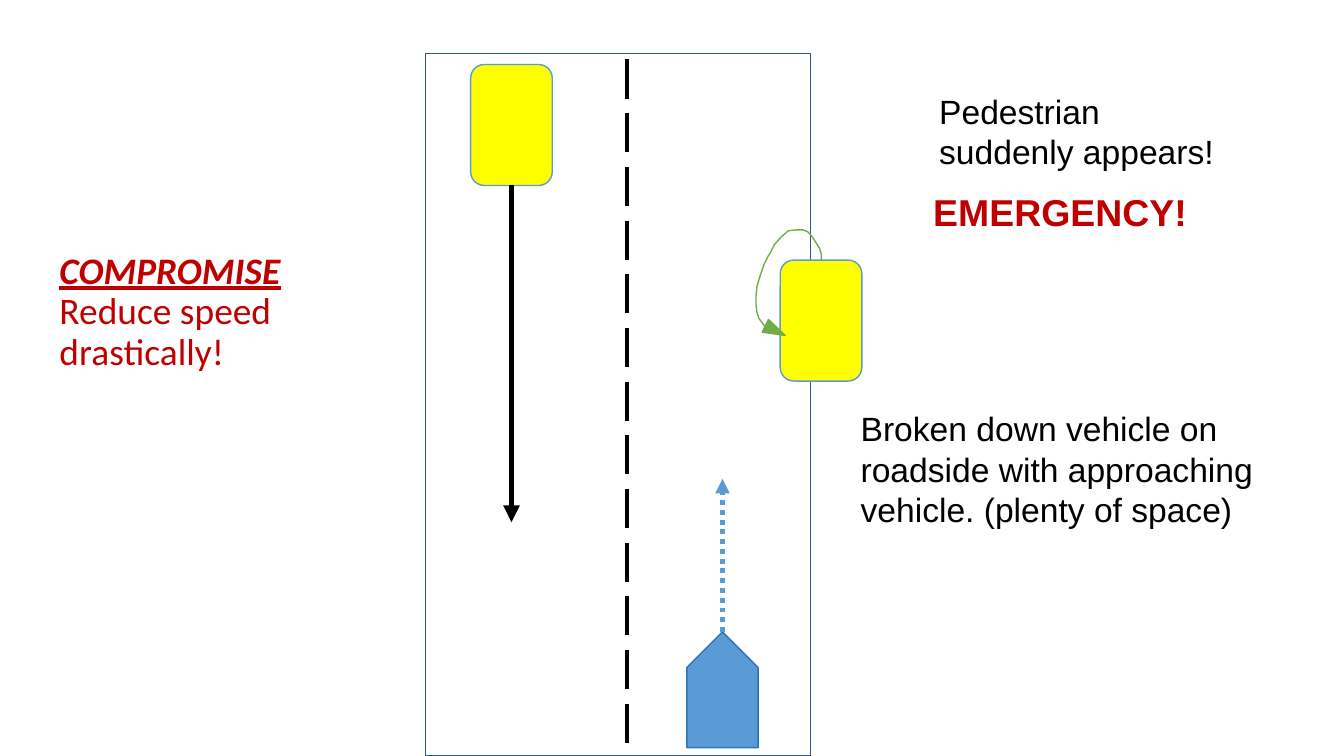
from lxml import etree
from pptx import Presentation
from pptx.dml.color import RGBColor
from pptx.enum.dml import MSO_LINE
from pptx.enum.shapes import MSO_CONNECTOR, MSO_SHAPE
from pptx.enum.text import MSO_ANCHOR
from pptx.oxml.ns import qn
from pptx.util import Pt

STRAIGHT = MSO_CONNECTOR.STRAIGHT
RECTANGLE, ROUNDED = MSO_SHAPE.RECTANGLE, MSO_SHAPE.ROUNDED_RECTANGLE
HOME_PLATE, TRIANGLE = MSO_SHAPE.PENTAGON, MSO_SHAPE.ISOSCELES_TRIANGLE
DOTTED, LONG_DASH = MSO_LINE.ROUND_DOT, MSO_LINE.LONG_DASH
TOP = MSO_ANCHOR.TOP
BOTTOM_SITE = 2

WHITE = RGBColor(0xFF, 0xFF, 0xFF)
BLACK = RGBColor(0x00, 0x00, 0x00)
RED = RGBColor(0xC0, 0x00, 0x00)
YELLOW = RGBColor(0xFF, 0xFF, 0x00)
BLUE = RGBColor(0x5B, 0x9B, 0xD5)
DARK_BLUE = RGBColor(0x2E, 0x75, 0xB6)
NAVY = RGBColor(0x32, 0x54, 0x91)
GREEN = RGBColor(0x70, 0xAD, 0x47)

CAR_WIDTH, CAR_HEIGHT = 58.3, 86.4
# Steps of the pedestrian around the parked car, from its top left corner
WALK = [(29.5, 0), (29.3, -4.5), (28, -8.6), (25.2, -13), (23, -16.6), (20, -20),
        (16.6, -21.6), (11, -21.6), (5.8, -20.9), (0.7, -16.6), (-4.3, -10.8),
        (-7.2, -5), (-8.6, -2.9), (-11.5, 2.9), (-13.7, 9.4), (-15.1, 13.7),
        (-16.6, 18.7), (-17.3, 25.9), (-17.3, 32), (-16.6, 37.4),
        (-15.1, 41.8), (-10.8, 47.5), (-6.5, 49.7), (-2.9, 49.7)]


def apply_format(font, values):
    for name, value in values.items():
        if name == "color":
            font.color.rgb = value
        else:
            setattr(font, name, value)


def add_block(shapes, kind, box, fill, line):
    block = shapes.add_shape(kind, *map(Pt, box))
    block.shadow.inherit = False
    block.fill.solid()
    block.fill.fore_color.rgb = fill
    block.line.color.rgb = line
    block.line.width = Pt(1)
    return block


def add_line(page, start, end, color, width, dash=None, arrow=False):
    line = page.shapes.add_connector(STRAIGHT, *map(Pt, start + end))
    line.line.color.rgb = color
    line.line.width = Pt(width)
    if dash:
        line.line.dash_style = dash
    if arrow:
        etree.SubElement(line.line._get_or_add_ln(), qn("a:tailEnd"), type="triangle")
    etree.SubElement(line._element.spPr, qn("a:effectLst"))
    return line


def add_road(page, left, top, width, height):
    add_block(page.shapes, RECTANGLE, (left, top, width, height), WHITE, NAVY)
    middle = left + 144.1
    add_line(page, (middle, top + 4.3), (middle, top + height - 5.8),
             BLACK, 3.5, LONG_DASH)


def add_car(page, left, top):
    box = (left, top, CAR_WIDTH, CAR_HEIGHT)
    return add_block(page.shapes, ROUNDED, box, YELLOW, BLUE)


def add_oncoming_car(page, left, top):
    car = add_car(page, left, top)
    middle, bottom = left + CAR_WIDTH / 2, top + CAR_HEIGHT
    arrow = add_line(page, (middle, bottom), (middle, bottom + 240.5),
                     BLACK, 4, arrow=True)
    arrow.begin_connect(car, BOTTOM_SITE)


def add_approaching_car(page, left, top, width, height):
    """Draw the blue vehicle pointing up, with its dotted heading."""
    middle = left + width / 2
    box = (middle - height / 2, top + (height - width) / 2, height, width)
    car = add_block(page.shapes, HOME_PLATE, box, BLUE, DARK_BLUE)
    car.rotation = 270
    add_line(page, (middle, top), (middle, top - 109.4), BLUE, 3.5, DOTTED, True)


def add_parked_car(page, left, top):
    """Draw the broken-down car and the pedestrian's way around it."""
    add_car(page, left, top)
    group = page.shapes.add_group_shape()
    steps = [(Pt(left + x), Pt(top + y)) for x, y in WALK]
    builder = group.shapes.build_freeform(*steps[0])
    builder.add_line_segments(steps[1:], close=False)
    walk = builder.convert_to_shape()
    walk.shadow.inherit = False
    walk.fill.background()
    walk.line.color.rgb = GREEN
    walk.line.width = Pt(1)
    head = add_block(group.shapes, TRIANGLE, (left - 8.6, top + 42.5, 10.1, 15.8),
                     GREEN, GREEN)
    head.rotation = 115.9


def add_note(page, box, text, values):
    frame = page.shapes.add_textbox(*map(Pt, box)).text_frame
    frame.word_wrap = True
    span = frame.paragraphs[0].add_run()
    span.text = text
    apply_format(span.font, values)


def fill_advice(body, left, top, width, height):
    body.left, body.top, body.width, body.height = map(Pt, (left, top, width, height))
    frame = body.text_frame
    frame.vertical_anchor = TOP
    para = frame.paragraphs[0]
    properties = para._p.get_or_add_pPr()
    properties.set("marL", "0")
    properties.set("indent", "0")
    etree.SubElement(properties, qn("a:buNone"))
    para.line_spacing = 0.9
    para.space_before = Pt(0)
    for text, strong in (("COMPROMISE", True), (" Reduce speed drastically!", False)):
        span = para.add_run()
        span.text = text
        apply_format(span.font, {"name": "Calibri", "size": Pt(26.7), "color": RED,
                                 "bold": strong, "italic": strong,
                                 "underline": strong})


def build_page(deck):
    page = deck.slides.add_slide(deck.slide_layouts[1])
    title = page.shapes.title._element
    title.getparent().remove(title)
    fill_advice(page.placeholders[1], 35.3, 176.4, 226.8, 136.1)

    plain = {"name": "Arial", "size": Pt(24), "color": BLACK}
    alarm = {"name": "Arial", "size": Pt(26.7), "color": RED, "bold": True}
    add_note(page, (663.8, 61.2, 216, 65.5), "Pedestrian suddenly appears!", plain)
    add_note(page, (659.5, 131.8, 216, 39.6), "EMERGENCY!", alarm)
    add_note(page, (607.7, 288, 321.1, 94.3),
             "Broken down vehicle on roadside with approaching vehicle. "
             "(plenty of space)", plain)

    add_road(page, 303.8, 38.2, 275, 501.8)
    add_oncoming_car(page, 336.2, 46.1)
    add_approaching_car(page, 490.7, 451.4, 50.8, 82.6)
    add_parked_car(page, 557.3, 185.8)


def main():
    deck = Presentation()
    deck.slide_width, deck.slide_height = Pt(960), Pt(540)
    build_page(deck)
    deck.save("out.pptx")


if __name__ == "__main__":
    main()
